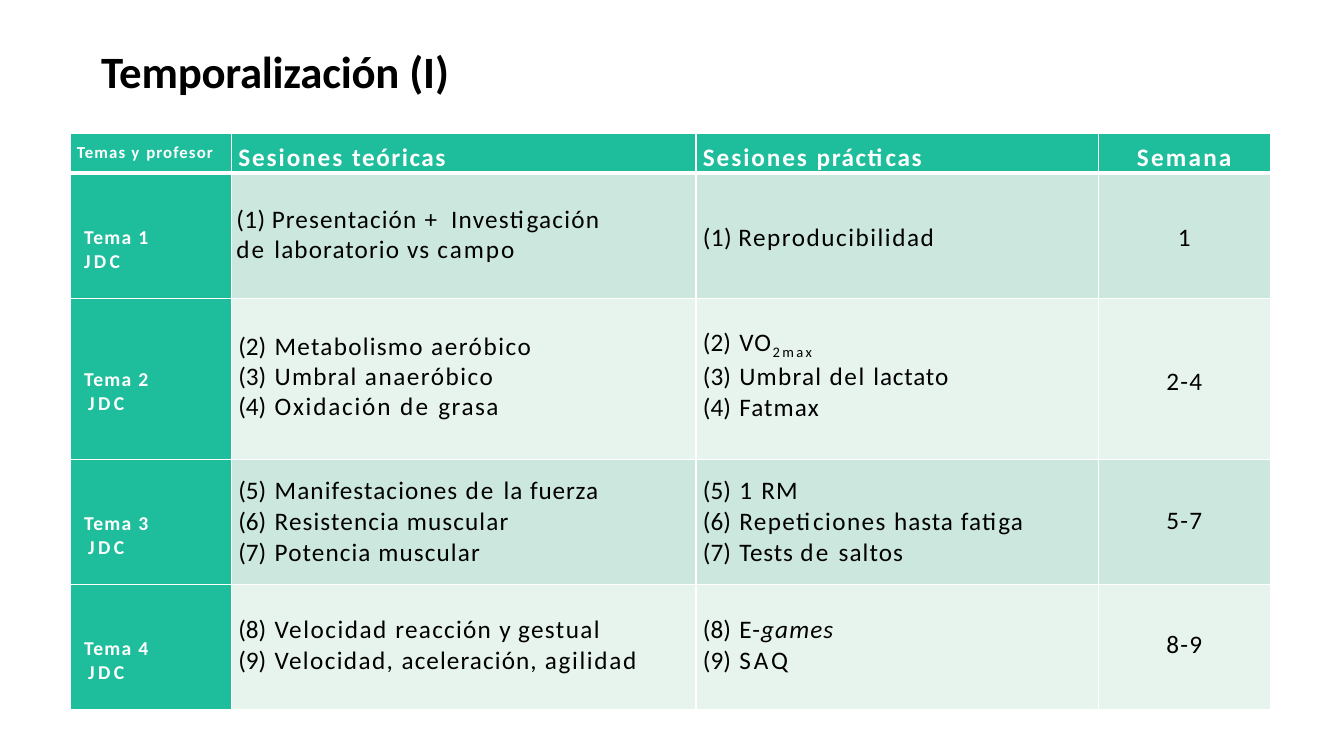
from dataclasses import dataclass

from lxml import etree
from pptx import Presentation
from pptx.dml.color import RGBColor
from pptx.enum import text
from pptx.oxml import ns
from pptx.util import Pt


@dataclass(frozen=True)
class Theme:
    """Colours, font and type sizes of the deck."""
    font: str = "Calibri"
    ink: str = "000000"
    white: str = "FFFFFF"
    green: str = "1EBD9B"
    bands: tuple = ("CCE8DE", "E7F4EE")
    title: int = 32
    body: int = 18
    topic: int = 14
    small: int = 12


T = Theme()
COLS = (115.2, 331.9, 287.3, 123.1)
ROWS = (28.8, 89.3, 115.2, 89.3, 89.3)
EDGES = (1, 3, 1, 0.5, 0.5, 1)
HEADERS = [
    [("Temas ", 0.8), ("y ", 1.1), ("profesor", 0.8)],
    [("Sesiones ", 1.4), ("teóricas", 1.1)],
    [("Sesiones ", 1.4), ("prácticas", 1.1)],
    [("Semana", 1.6)],
]
TOPICS = [
    {"start": None, "tops": (37.5, 22, 35.5, 35.5), "week": "1", "shift": 0,
     "theory": [[("(1) ", 0.3), ("Presentación ", 0.8), ("+ ", 3), ("Investigación", 0.9)],
                [("de ", 1.6), ("laboratorio vs ", 0.8), ("campo", 1.4)]],
     "practice": [[("(1) ", 0.3), ("Reproducibilidad", 1.1)]]},
    {"start": 2, "tops": (50, 23.5, 20.9, 48.5), "week": "2-4", "shift": 3,
     "theory": [[("Metabolismo ", 0.9), ("aeróbico", 1.1)],
                [("Umbral ", 0.9), ("anaeróbico", 1.1)],
                [("Oxidación ", 1.3), ("de ", 1.6), ("grasa", 1.1)]],
     "practice": [[("VO", 0.9), ("2max", 1.7, {"baseline": "-23000"})],
                  [("Umbral ", 0.9), ("del ", 1.2), ("lactato", 0.6)],
                  [("Fatmax", 0.8)]]},
    {"start": 5, "tops": (37.5, 11.5, 11.5, 32.5), "week": "5-7", "shift": 3,
     "theory": [[("Manifestaciones ", 0.8), ("de ", 1.6), ("la ", 0.7), ("fuerza", 0.6)],
                [("Resistencia muscular", 0.8)],
                [("Potencia muscular", 0.8)]],
     "practice": [[("1 ", 1.3), ("RM", 0.7)],
                  [("Repeticiones ", 1), ("hasta ", 0.7), ("fatiga", 0.8)],
                  [("Tests ", 0.6), ("de ", 1.6), ("saltos", 0.8)]]},
    {"start": 8, "tops": (37.5, 21.5, 21.5, 32), "week": "8-9", "shift": 3,
     "theory": [[("Velocidad ", 1.1), ("reacción ", 0.9), ("y ", 0.6), ("gestual", 1)],
                [("Velocidad, ", 1), ("aceleración, ", 0.8), ("agilidad", 1.2)]],
     "practice": [[("E-", 0.8), ("games", 0.8, {"i": "1"})], [("SAQ", 2.2)]]},
]


def apply(obj, values):
    """Set every named attribute of an object."""
    for name, value in values.items():
        setattr(obj, name, value)


def write(tf, lines, size, color=T.ink, bold=False, indents=(0,), start=None, center=False, leading=None):
    """Fill a text frame with paragraphs of letter-spaced runs."""
    for i, line in enumerate(lines):
        p = tf.add_paragraph() if i else tf.paragraphs[0]
        p.alignment = text.PP_ALIGN.CENTER if center else text.PP_ALIGN.LEFT
        if leading and i:
            p.line_spacing = Pt(leading)
        pPr = p._p.get_or_add_pPr()
        pPr.set("marL", str(Pt(indents[min(i, len(indents) - 1)])))
        if start:
            pPr.set("indent", str(-Pt(26)))
            number = etree.SubElement(pPr, ns.qn("a:buAutoNum"))
            number.set("type", "arabicParenBoth")
            number.set("startAt", str(start))
        for words, spacing, *extra in line:
            r = p.add_run()
            r.text = words
            apply(r.font, {"name": T.font, "size": Pt(size), "bold": bold})
            r.font.color.rgb = RGBColor.from_string(color)
            rPr = r._r.get_or_add_rPr()
            for name, value in {"spc": str(round(spacing * 100)), **(extra[0] if extra else {})}.items():
                rPr.set(name, value)


def style_cell(cell, fill, top, above, below):
    """Set the margins, fill and white borders of a cell."""
    apply(cell, {"margin_left": 0, "margin_right": 0, "margin_bottom": 0, "margin_top": Pt(top)})
    cell.fill.solid()
    cell.fill.fore_color.rgb = RGBColor.from_string(fill)
    tcPr = cell._tc.get_or_add_tcPr()
    for i, (side, width) in enumerate({"L": 1, "R": 1, "T": above, "B": below}.items()):
        ln = etree.Element(ns.qn(f"a:ln{side}"), w=str(Pt(width)))
        solid = etree.SubElement(ln, ns.qn("a:solidFill"))
        etree.SubElement(solid, ns.qn("a:srgbClr"), val=T.white)
        tcPr.insert(i, ln)


def add_title(s, x, y, w, h):
    """Place the slide title in the given box."""
    tf = s.shapes.add_textbox(Pt(x), Pt(y), Pt(w), Pt(h)).text_frame
    apply(tf, {"word_wrap": True, "margin_left": 0, "margin_right": 0, "margin_top": Pt(1), "margin_bottom": 0})
    write(tf, [[("Temporalización ", -0.2), ("(I)", 0)]], T.title, bold=True, indents=(1,))


def add_schedule(s, x, y, w, h):
    """Place the table of topics, sessions and weeks in the given box."""
    table = s.shapes.add_table(len(ROWS), len(COLS), Pt(x), Pt(y), Pt(w), Pt(h)).table
    apply(table, {"first_row": False, "horz_banding": False})
    for col, share in zip(table.columns, COLS):
        col.width = Pt(w * share / sum(COLS))
    for row, share in zip(table.rows, ROWS):
        row.height = Pt(h * share / sum(ROWS))
    for c, header in enumerate(HEADERS):
        cell = table.cell(0, c)
        style_cell(cell, T.green, 6.5, *EDGES[:2])
        write(cell.text_frame, [header], T.body if c else T.small, T.white, True,
              (0,) if c == 3 else (5,), center=c == 3)
    for n, topic in enumerate(TOPICS, 1):
        cells = [table.cell(n, c) for c in range(len(COLS))]
        for c, cell in enumerate(cells):
            fill = T.bands[(n - 1) % 2] if c else T.green
            style_cell(cell, fill, topic["tops"][c], *EDGES[n:n + 2])
        label, theory, practice, week = [cell.text_frame for cell in cells]
        start = topic["start"]
        write(label, [[("Tema ", 0.9), (str(n), 1.9)], [("JDC", 2.4)]], T.topic, T.white, True,
              (10, 10 + topic["shift"]))
        write(theory, topic["theory"], T.body, indents=(31 if start else 3.6,), start=start,
              leading=21.5 if n == 2 else None)
        write(practice, topic["practice"], T.body, indents=(31 if start else 5,), start=start)
        write(week, [[(topic["week"], 0.9)]], T.body, center=True)


def main():
    """Build and save the slide."""
    prs = Presentation()
    apply(prs, {"slide_width": Pt(960), "slide_height": Pt(540)})
    s = prs.slides.add_slide(prs.slide_layouts[6])
    add_schedule(s, 50, 95, 857.5, 412)
    add_title(s, 71.3, 30.2, 253.4, 40.3)
    prs.save("out.pptx")


if __name__ == "__main__":
    main()
